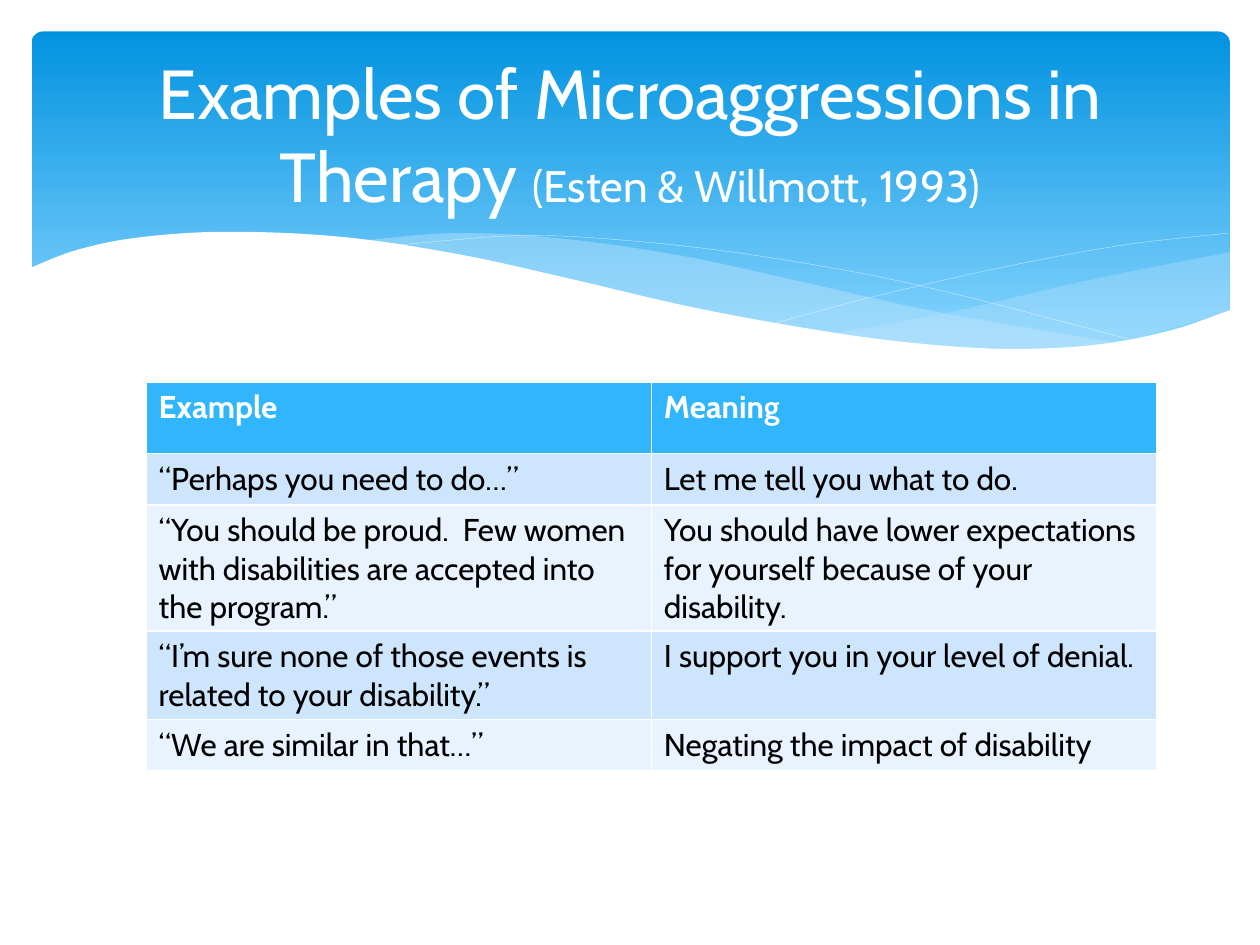
from pptx import Presentation
from pptx import util as u
from pptx.dml.color import RGBColor
from pptx.enum import shapes, text
from lxml import etree

WHITE, BLACK = RGBColor(255, 255, 255), RGBColor(0, 0, 0)
SKY_TOP, SKY_END = RGBColor(0x02, 0x93, 0xE0), RGBColor(0x83, 0xD3, 0xFE)
MIST, HEAD = RGBColor(0xC6, 0xE7, 0xFC), RGBColor(0x31, 0xB6, 0xFD)
BANDS = RGBColor(0xCE, 0xE5, 0xFE), RGBColor(0xE8, 0xF3, 0xFF)
FONT = "Cabin"
STEPS = 8  # straight pieces between two knots of a curve

# Content
TITLE = [("Examples of Microaggressions in Therapy ", 39.6),
         ("(Esten & Willmott, 1993)", 25.2)]
ROWS = [
    ("Example", "Meaning"),
    ("“Perhaps you need to do…”", "Let me tell you what to do."),
    ("“You should be proud.  Few women with disabilities are accepted into the program.”",
     "You should have lower expectations for yourself because of your disability."),
    ("“I’m sure none of those events is related to your disability.”",
     "I support you in your level of denial."),
    ("“We are similar in that…”", "Negating the impact of disability"),
]

# Curves as a few (x, y) knots in inches, left to right
RIGHT_TOP = [(6.61, 2.65), (7.53, 2.48), (8.61, 2.23), (9.76, 2)]
RIGHT_BOTTOM = [(6.61, 2.65), (7.32, 2.74), (8.03, 2.78), (8.81, 2.73), (9.76, 2.47)]
LONG_TOP = [(2.86, 1.91), (3.61, 1.85), (4.42, 1.89), (5.41, 2.03), (6.29, 2.22),
            (7.41, 2.47), (8.93, 2.73)]
LONG_BOTTOM = [(2.86, 1.91), (3.62, 2.03), (4.49, 2.22), (5.66, 2.48), (6.8, 2.68),
               (7.73, 2.77), (8.38, 2.78), (8.93, 2.73)]
FALLING = [(3.09, 1.95), (4.16, 1.87), (5.1, 1.92), (6.08, 2.04), (7.27, 2.26), (9.07, 2.72)]
RISING = [(6.13, 2.57), (6.95, 2.35), (8.06, 2.1), (8.95, 1.94), (9.75, 1.85)]
WAVE_CREST = [(0.23, 2.13), (0.59, 1.99), (1.06, 1.89), (1.77, 1.84), (2.71, 1.88),
              (3.65, 2.02), (4.47, 2.2), (5.55, 2.45), (6.68, 2.65), (7.44, 2.74),
              (8.09, 2.77), (8.75, 2.73), (9.3, 2.62), (9.77, 2.46)]
WAVE_BASE = [(0.23, 3.29), (9.77, 3.29)]

# Upper curve, lower curve, opacity in percent; no lower curve means a hairline
WAVES = [
    {"upper": RIGHT_TOP, "lower": RIGHT_BOTTOM, "color": MIST, "opacity": 29},
    {"upper": LONG_TOP, "lower": LONG_BOTTOM, "color": MIST, "opacity": 40},
    {"upper": FALLING, "color": WHITE},
    {"upper": RISING, "color": WHITE},
    {"upper": WAVE_CREST, "lower": WAVE_BASE, "color": WHITE},
]

prs = Presentation()
prs.slide_width, prs.slide_height = u.Inches(10), u.Inches(7.5)
s = prs.slides.add_slide(prs.slide_layouts[6])


def inches(*values):
    return [u.Inches(v) for v in values]


def smooth_curve(knots):
    """Cubic Hermite curve; the slope at a knot is that between its neighbours."""
    slopes = []
    for i in range(len(knots)):
        (xa, ya), (xb, yb) = knots[max(i - 1, 0)], knots[min(i + 1, len(knots) - 1)]
        slopes.append((yb - ya) / (xb - xa))
    points = [knots[0]]
    for (xa, ya), (xb, yb), ma, mb in zip(knots, knots[1:], slopes, slopes[1:]):
        width = xb - xa
        for step in range(1, STEPS + 1):
            t = step / STEPS
            ease = t * t * (3 - 2 * t)
            bend = t * (1 - t) * width * ((1 - t) * ma - t * mb)
            points.append((xa + t * width, ya + ease * (yb - ya) + bend))
    return points


def add_wave(upper, color, lower=None, opacity=100):
    outline = smooth_curve(upper)
    if lower:
        outline += reversed(smooth_curve(lower))
    points = [inches(x, y) for x, y in outline]
    builder = s.shapes.build_freeform(*points[0])
    builder.add_line_segments(points[1:], close=bool(lower))
    sp = builder.convert_to_shape()
    sp.shadow.inherit = False
    if not lower:
        sp.fill.background()
        sp.line.color.rgb, sp.line.width = color, u.Pt(0.1)
        return
    sp.fill.solid()
    sp.fill.fore_color.rgb = color
    sp.line.fill.background()
    if opacity < 100:
        clr = sp.fill._xPr.solidFill[0]
        alpha = etree.SubElement(clr, clr.tag.replace("srgbClr", "alpha"))
        alpha.set("val", str(opacity * 1000))


def add_run(p, words, color, **fmt):
    r = p.add_run()
    r.text = words
    r.font.color.rgb = color
    for name, value in {"name": FONT, **fmt}.items():
        setattr(r.font, name, value)


# Gradient banner
sp = s.shapes.add_shape(shapes.MSO_SHAPE.ROUNDED_RECTANGLE, *inches(0.25, 0.25, 9.51, 2.7))
sp.adjustments[0] = 0.034
sp.shadow.inherit = False
sp.line.fill.background()
sp.fill.gradient()
sp.fill.gradient_angle = 270
for stop, color, position in zip(sp.fill.gradient_stops, (SKY_TOP, SKY_END), (0, 0.9)):
    stop.color.rgb, stop.position = color, position

# Waves over the banner
for wave in WAVES:
    add_wave(**wave)

# Title
tf = s.shapes.add_textbox(*inches(0.5, 0.37, 9, 1.37)).text_frame
tf.word_wrap, tf.vertical_anchor = True, text.MSO_ANCHOR.MIDDLE
p = tf.paragraphs[0]
p.alignment = text.PP_ALIGN.CENTER
for words, size in TITLE:
    add_run(p, words, WHITE, size=u.Pt(size))

# Table: the default table style draws the white rules between cells
table = s.shapes.add_table(len(ROWS), 2, *inches(1.16, 3.03, 8.02, 2.21)).table
for i, row in enumerate(ROWS):
    header = i == 0
    table.rows[i].height = u.Inches(0.57 if header else 0.41)
    for cell, words in zip(table.rows[i].cells, row):
        cell.fill.solid()
        cell.fill.fore_color.rgb = HEAD if header else BANDS[(i - 1) % 2]
        add_run(cell.text_frame.paragraphs[0], words, WHITE if header else BLACK,
                size=u.Pt(18), bold=header)

prs.save("out.pptx")
